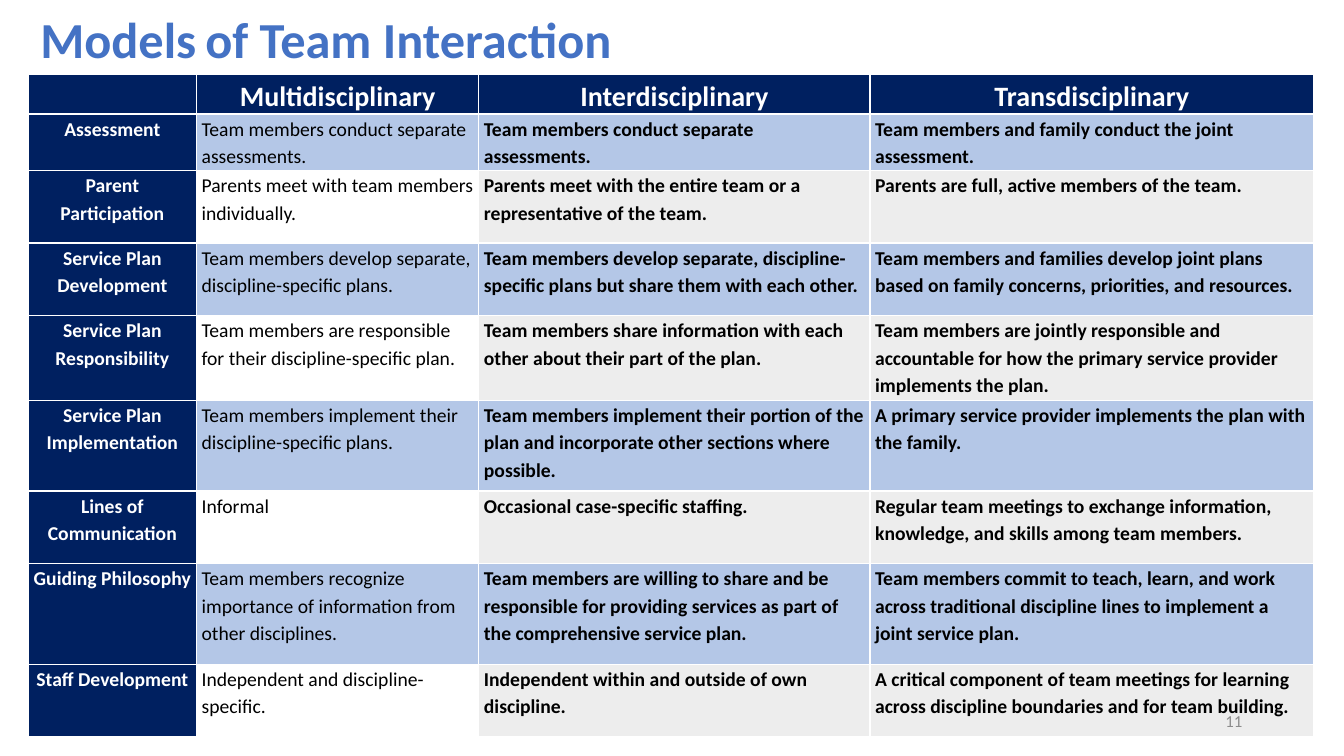
from lxml import etree
from pptx import Presentation
from pptx import util as u
from pptx.dml.color import RGBColor
from pptx.enum import text
from pptx.oxml import ns

HUES = {"navy": "002060", "blue": "4472C4", "pale": "B4C7E7", "gray": "EDEDED",
        "white": "FFFFFF", "black": "000000", "dim": "8C8C8C"}
ALIGN = text.PP_ALIGN
COLS = [1.67, 2.8, 3.88, 4.4]
HIGHS = [0.35, 0.56, 0.72, 0.72, 0.84, 0.9, 0.72, 1, 0.72]
ROWS = [
    ["", "Multidisciplinary", "Interdisciplinary", "Transdisciplinary"],
    ["Assessment",
     "Team members conduct separate assessments.",
     "Team members conduct separate assessments.",
     "Team members and family conduct the joint assessment."],
    ["Parent Participation",
     "Parents meet with team members individually.",
     "Parents meet with the entire team or a representative of the team.",
     "Parents are full, active members of the team."],
    ["Service Plan Development",
     "Team members develop separate, discipline-specific plans.",
     "Team members develop separate, discipline-specific plans but share them with each other.",
     "Team members and families develop joint plans based on family concerns, priorities, and resources."],
    ["Service Plan Responsibility",
     "Team members are responsible for their discipline-specific plan.",
     "Team members share information with each other about their part of the plan.",
     "Team members are jointly responsible and accountable for how the primary service provider "
     "implements the plan."],
    ["Service Plan Implementation",
     "Team members implement their discipline-specific plans.",
     "Team members implement their portion of the plan and incorporate other sections where possible.",
     "A primary service provider implements the plan with the family."],
    ["Lines of Communication",
     "Informal",
     "Occasional case-specific staffing.",
     "Regular team meetings to exchange information, knowledge, and skills among team members."],
    ["Guiding Philosophy",
     "Team members recognize importance of information from other disciplines.",
     "Team members are willing to share and be responsible for providing services as part of "
     "the comprehensive service plan.",
     "Team members commit to teach, learn, and work across traditional discipline lines to "
     "implement a joint service plan."],
    ["Staff Development",
     "Independent and discipline-specific.",
     "Independent within and outside of own discipline.",
     "A critical component of team meetings for learning across discipline boundaries and for "
     "team building."],
]


def color(name):
    return RGBColor.from_string(HUES[name])


def apply(item, form):
    for key, value in form.items():
        setattr(item, key, value)


def add_run(para, words, size, hue, bold=False):
    run = para.add_run()
    run.text = words
    apply(run.font, {"name": "Calibri", "size": u.Pt(size), "bold": bold})
    run.font.color.rgb = color(hue)


def place(shape, left, top, width, height):
    apply(shape, {"left": u.Inches(left), "top": u.Inches(top),
                  "width": u.Inches(width), "height": u.Inches(height)})
    apply(shape.text_frame, {"word_wrap": True, "auto_size": text.MSO_AUTO_SIZE.NONE,
                             "vertical_anchor": text.MSO_ANCHOR.MIDDLE})


def add_title(slide):
    title = slide.shapes.title
    place(title, 0.3, 0.21, 11.49, 0.42)
    para = title.text_frame.paragraphs[0]
    apply(para, {"alignment": ALIGN.LEFT, "line_spacing": 0.9})
    add_run(para, "Models", 36, "blue", True)
    add_run(para, " ", 28, "black", True)
    add_run(para, "of Team Interaction", 36, "blue", True)


def add_edges(cell):
    props = cell._tc.get_or_add_tcPr()
    for side in "LRTB":
        line = etree.SubElement(props, ns.qn("a:ln" + side), w=str(u.Pt(1)))
        fill = etree.SubElement(line, ns.qn("a:solidFill"))
        etree.SubElement(fill, ns.qn("a:srgbClr"), val=HUES["white"])


def cell_fill(row, col):
    if row == 0 or col == 0:
        return "navy"
    if row % 2:
        return "pale"
    return "white" if col == 1 else "gray"


def fill_cell(cell, row, col, words):
    head = row == 0 or col == 0
    add_edges(cell)
    apply(cell, {"margin_left": u.Inches(0.05), "margin_right": u.Inches(0.05),
                 "margin_top": 0, "margin_bottom": 0})
    cell.fill.solid()
    cell.fill.fore_color.rgb = color(cell_fill(row, col))
    para = cell.text_frame.paragraphs[0]
    apply(para, {"alignment": ALIGN.CENTER if head else ALIGN.LEFT,
                 "line_spacing": 1.15, "space_after": u.Pt(10)})
    if words:
        add_run(para, words, 14 if row else 20,
                "white" if head else "black", head or col > 1)


def add_grid(slide):
    frame = slide.shapes.add_table(len(ROWS), len(COLS), u.Inches(0.28), u.Inches(0.74),
                                   u.Inches(sum(COLS)), u.Inches(sum(HIGHS)))
    grid = frame.table
    apply(grid, {"first_row": False, "horz_banding": False})
    for col, width in zip(grid.columns, COLS):
        col.width = u.Inches(width)
    for row, height in zip(grid.rows, HIGHS):
        row.height = u.Inches(height)
    for row, line in enumerate(ROWS):
        for col, words in enumerate(line):
            fill_cell(grid.cell(row, col), row, col, words)


def add_number(slide):
    box = slide.shapes.add_textbox(0, 0, 0, 0)
    place(box, 9.42, 6.95, 3, 0.4)
    para = box.text_frame.paragraphs[0]
    para.alignment = ALIGN.RIGHT
    add_run(para, "11", 12, "dim")


def main():
    deck = Presentation()
    apply(deck, {"slide_width": u.Inches(13.33), "slide_height": u.Inches(7.5)})
    slide = deck.slides.add_slide(deck.slide_layouts[5])
    add_title(slide)
    add_grid(slide)
    add_number(slide)
    deck.save("out.pptx")


if __name__ == "__main__":
    main()
